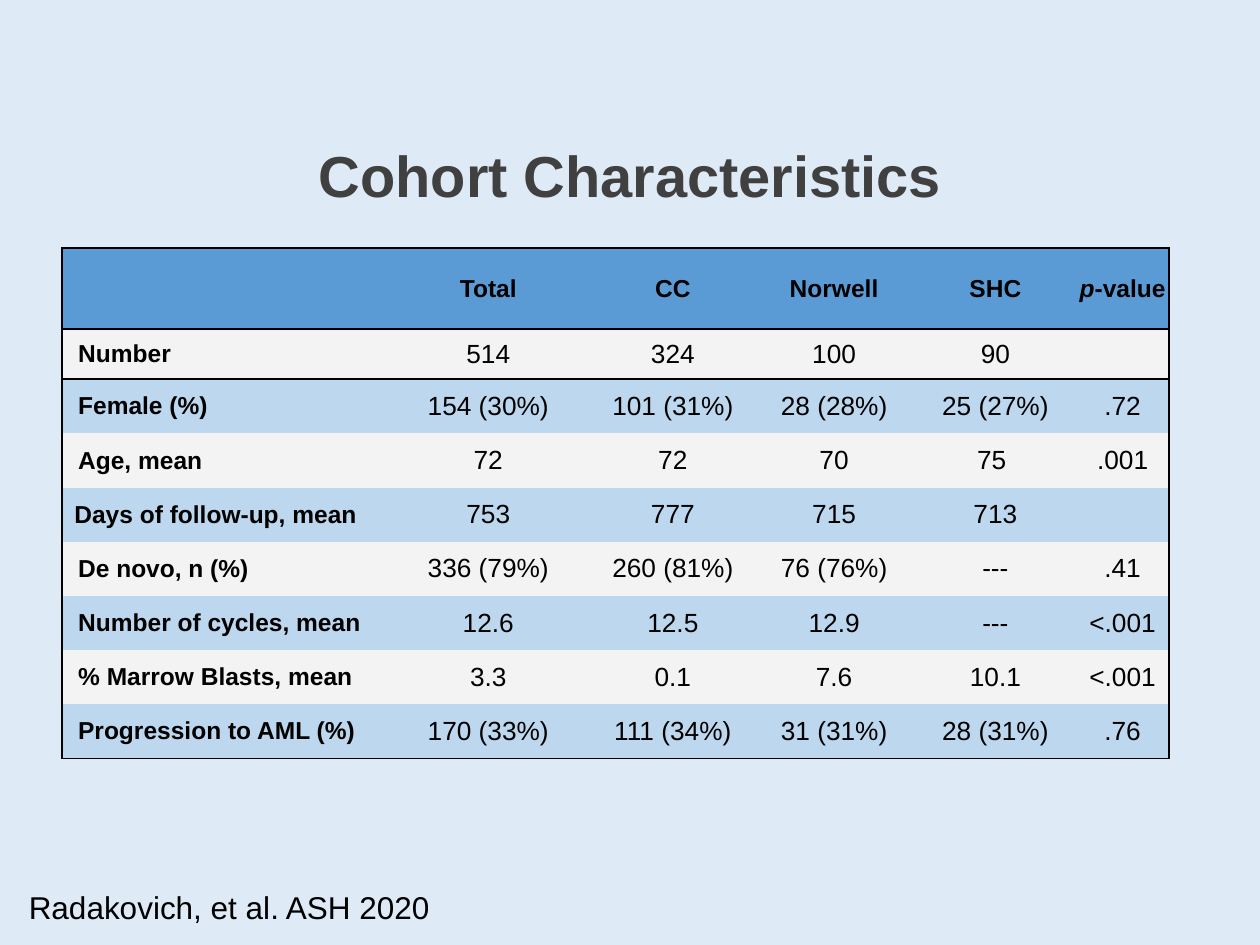
import pptx
import pptx.util
import pptx.dml.color
import pptx.enum.text
import pptx.oxml
import pptx.oxml.ns

Inches = pptx.util.Inches
Pt = pptx.util.Pt
CENTER = pptx.enum.text.PP_ALIGN.CENTER
LEFT = pptx.enum.text.PP_ALIGN.LEFT
MIDDLE = pptx.enum.text.MSO_ANCHOR.MIDDLE


def color(hex_string):
    return pptx.dml.color.RGBColor.from_string(hex_string)


def add_run(paragraph, words, hex_string, **formats):
    run = paragraph.add_run()
    run.text = words
    run.font.color.rgb = color(hex_string)
    for name, value in {"name": "Arial", **formats}.items():
        setattr(run.font, name, value)


deck = pptx.Presentation()
deck.slide_width, deck.slide_height = Inches(10), Inches(7.5)
slide = deck.slides.add_slide(deck.slide_layouts[5])
slide.background.fill.solid()
slide.background.fill.fore_color.rgb = color("DEEBF7")

title = slide.shapes.title
title_box = {"left": 0, "top": 1.14, "width": 10, "height": 0.56}
for name, value in title_box.items():
    setattr(title, name, Inches(value))
title_frame = {
    "margin_left": Inches(0.07), "margin_right": Inches(0.07),
    "margin_top": Inches(0.04), "margin_bottom": Inches(0.04),
    "vertical_anchor": MIDDLE, "word_wrap": True,
    "auto_size": pptx.enum.text.MSO_AUTO_SIZE.NONE,
}
for name, value in title_frame.items():
    setattr(title.text_frame, name, value)
heading = title.text_frame.paragraphs[0]
heading.alignment = CENTER
heading.line_spacing = 0.9
add_run(heading, "Cohort Characteristics", "404040", size=Pt(33), bold=True)

cohort_rows = [
    ["", "Total", "CC", "Norwell", "SHC", "p-value"],
    ["Number", "514", "324", "100", "90", ""],
    ["Female (%)", "154 (30%)", "101 (31%)", "28 (28%)", "25 (27%)", ".72"],
    ["Age, mean", "72", "72", "70", "75 ", ".001"],
    ["Days of follow-up, mean", "753", "777", "715", "713", ""],
    ["De novo, n (%)", "336 (79%)", "260 (81%)", "76 (76%)", "---", ".41"],
    ["Number of cycles, mean", "12.6", "12.5", "12.9", "---", "<.001"],
    ["% Marrow Blasts, mean", "3.3", "0.1", "7.6", "10.1", "<.001"],
    ["Progression to AML (%)", "170 (33%)", "111 (34%)", "31 (31%)", "28 (31%)", ".76"],
]
column_widths = [2.56, 1.65, 1.28, 1.28, 1.28, 0.74]
row_heights = [0.64, 0.4] + [0.43] * 7
last_row, last_column = len(row_heights) - 1, len(column_widths) - 1

cohort = slide.shapes.add_table(
    len(row_heights), len(column_widths), Inches(0.49), Inches(1.97),
    Inches(sum(column_widths)), Inches(sum(row_heights))).table
cohort.first_row = cohort.horz_banding = False
NO_STYLE_NO_GRID = "{2D5ABB26-0587-4C30-8999-92F81FD0307C}"
cohort._tbl.tblPr.find(pptx.oxml.ns.qn("a:tableStyleId")).text = NO_STYLE_NO_GRID
for column, width in zip(cohort.columns, column_widths):
    column.width = Inches(width)
for row, height in zip(cohort.rows, row_heights):
    row.height = Inches(height)

for r, entries in enumerate(cohort_rows):
    for c, entry in enumerate(entries):
        cell = cohort.cell(r, c)
        borders = {
            "lnL": c == 0, "lnR": c == last_column,
            "lnT": r in (0, 1), "lnB": r in (0, last_row),
        }
        for side, drawn in borders.items():
            if drawn:
                cell._tc.get_or_add_tcPr().append(pptx.oxml.parse_xml(
                    f'<a:{side} {pptx.oxml.ns.nsdecls("a")} w="12700"><a:solidFill>'
                    f'<a:srgbClr val="000000"/></a:solidFill></a:{side}>'))
        cell.fill.solid()
        cell.fill.fore_color.rgb = color("5B9BD5" if r == 0 else "F3F3F3" if r % 2 else "BDD7EE")

        label_margin = 0.1 if entry.startswith("Days") else 0.13
        cell_formats = {
            "margin_left": Inches(0.01 if c else label_margin),
            "margin_right": Inches(0.01), "margin_top": Inches(0.01),
            "margin_bottom": Inches(0.01), "vertical_anchor": MIDDLE,
        }
        for name, value in cell_formats.items():
            setattr(cell, name, value)

        paragraph = cell.text_frame.paragraphs[0]
        paragraph.alignment = CENTER if c else LEFT
        is_heading = r == 0 or c == 0
        formats = {"size": Pt(14 if is_heading else 15), "bold": is_heading}
        if entry == "p-value":
            add_run(paragraph, "p", "000000", italic=True, **formats)
            add_run(paragraph, "-value", "000000", **formats)
        elif entry:
            add_run(paragraph, entry, "000000", **formats)

citation = slide.shapes.add_textbox(Inches(0.13), Inches(7), Inches(3.41), Inches(0.4))
citation.text_frame.word_wrap = False
citation.text_frame.auto_size = pptx.enum.text.MSO_AUTO_SIZE.SHAPE_TO_FIT_TEXT
add_run(citation.text_frame.paragraphs[0], "Radakovich, et al. ASH 2020", "000000", size=Pt(18))

deck.save("out.pptx")
